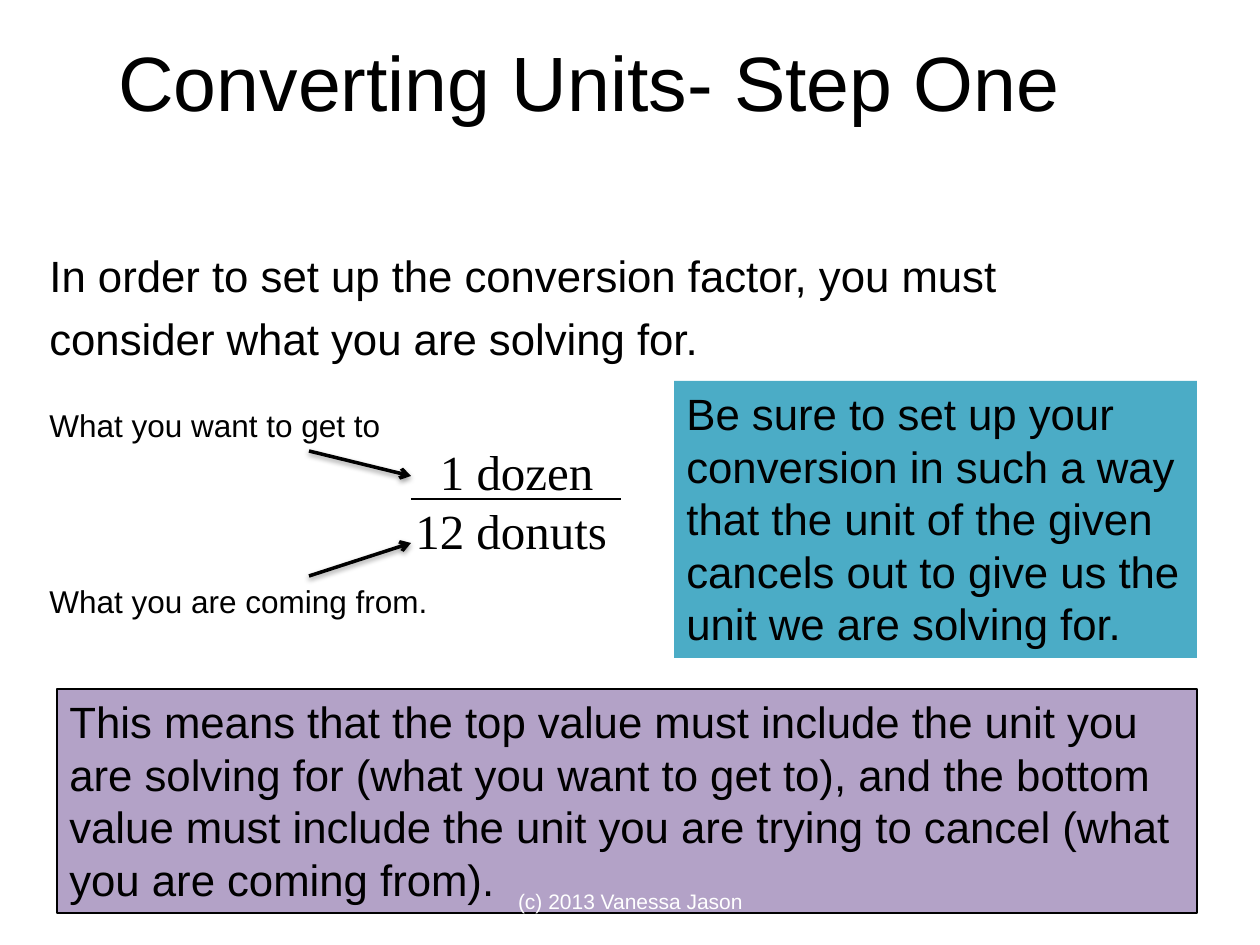
from lxml.etree import SubElement
from pptx import Presentation
from pptx.dml.color import RGBColor
from pptx.enum.shapes import MSO_CONNECTOR as CONNECTOR, MSO_SHAPE as SHAPE
from pptx.enum.text import MSO_ANCHOR as ANCHOR, PP_ALIGN as ALIGN
from pptx.oxml.ns import qn
from pptx.util import Pt

PX = 914400 / 126  # EMU per pixel

BLACK = RGBColor(0x00, 0x00, 0x00)
WHITE = RGBColor(0xFF, 0xFF, 0xFF)
TEAL = RGBColor(0x4B, 0xAC, 0xC6)
LILAC = RGBColor(0xB3, 0xA2, 0xC7)


def px(*lengths):
    return [round(length * PX) for length in lengths]


def write(frame, text, size, font="Arial", color=BLACK, align=ALIGN.LEFT,
          anchor=ANCHOR.TOP, spacing=None, wrap=True):
    frame.word_wrap = wrap
    frame.vertical_anchor = anchor
    frame.text = text
    for paragraph in frame.paragraphs:
        paragraph.alignment = align
        paragraph.line_spacing = spacing
        for run in paragraph.runs:
            run.font.size = Pt(size)
            run.font.name = font
            run.font.color.rgb = color


def add_text(slide, box, text, size, **style):
    frame = slide.shapes.add_textbox(*px(*box)).text_frame
    write(frame, text, size, **style)
    return frame


def add_panel(slide, box, text, fill, outline=None):
    panel = slide.shapes.add_shape(SHAPE.RECTANGLE, *px(*box))
    panel.shadow.inherit = False
    panel.fill.solid()
    panel.fill.fore_color.rgb = fill
    if outline is None:
        panel.line.fill.background()
    else:
        panel.line.color.rgb = outline
        panel.line.width = Pt(0.75)
    write(panel.text_frame, text, 25)


def add_line(slide, start, end, width):
    line = slide.shapes.add_connector(CONNECTOR.STRAIGHT, *px(*start, *end))
    line.line.color.rgb = BLACK
    line.line.width = Pt(width)
    effects = SubElement(line._element.spPr, qn("a:effectLst"))
    return line, effects


def add_arrow(slide, start, end):
    arrow, effects = add_line(slide, start, end, 2)
    SubElement(arrow.line._get_or_add_ln(), qn("a:tailEnd"), type="arrow")
    # Soft shadow just below the arrow
    shadow = SubElement(effects, qn("a:outerShdw"), blurRad=str(Pt(3.1)),
                        dist=str(Pt(1.6)), dir="5400000", rotWithShape="0")
    color = SubElement(shadow, qn("a:srgbClr"), val=str(BLACK))
    SubElement(color, qn("a:alpha"), val="38000")


def add_fraction(slide):
    fraction = add_text(slide, (403, 435, 217, 130), "1 dozen\n12 donuts", 28,
                        font="Times New Roman", wrap=False)
    numerator = fraction.paragraphs[0]._p.get_or_add_pPr()
    numerator.set("marL", str(Pt(14)))
    numerator.set("indent", "0")
    add_line(slide, (411, 499), (621, 499), 1.5)


def main():
    prs = Presentation()
    prs.slide_width, prs.slide_height = px(1260, 945)
    slide = prs.slides.add_slide(prs.slide_layouts[6])

    # Heading and introduction
    add_text(slide, (37, 232, 1114, 139),
             "In order to set up the conversion factor, you must consider "
             "what you are solving for.", 25, spacing=1.2)
    add_text(slide, (106, 28, 1091, 106), "Converting Units- Step One", 44)

    # Conversion factor
    add_fraction(slide)

    # Advice panels
    add_panel(slide, (674, 381, 523, 277),
              "Be sure to set up your conversion in such a way that the unit "
              "of the given cancels out to give us the unit we are solving "
              "for.", TEAL)
    add_panel(slide, (57, 689, 1140, 224),
              "This means that the top value must include the unit you are "
              "solving for (what you want to get to), and the bottom value "
              "must include the unit you are trying to cancel (what you are "
              "coming from).", LILAC, outline=BLACK)

    # Labels pointing at the fraction
    add_text(slide, (37, 400, 375, 50), "What you want to get to", 18)
    add_text(slide, (37, 576, 442, 50), "What you are coming from.", 18)
    add_arrow(slide, (309, 451), (411, 476))
    add_arrow(slide, (309, 576), (411, 543))

    # Footer
    add_text(slide, (431, 876, 399, 50), "(c) 2013 Vanessa Jason", 12,
             color=WHITE, align=ALIGN.CENTER, anchor=ANCHOR.MIDDLE)

    prs.save("out.pptx")


if __name__ == "__main__":
    main()
